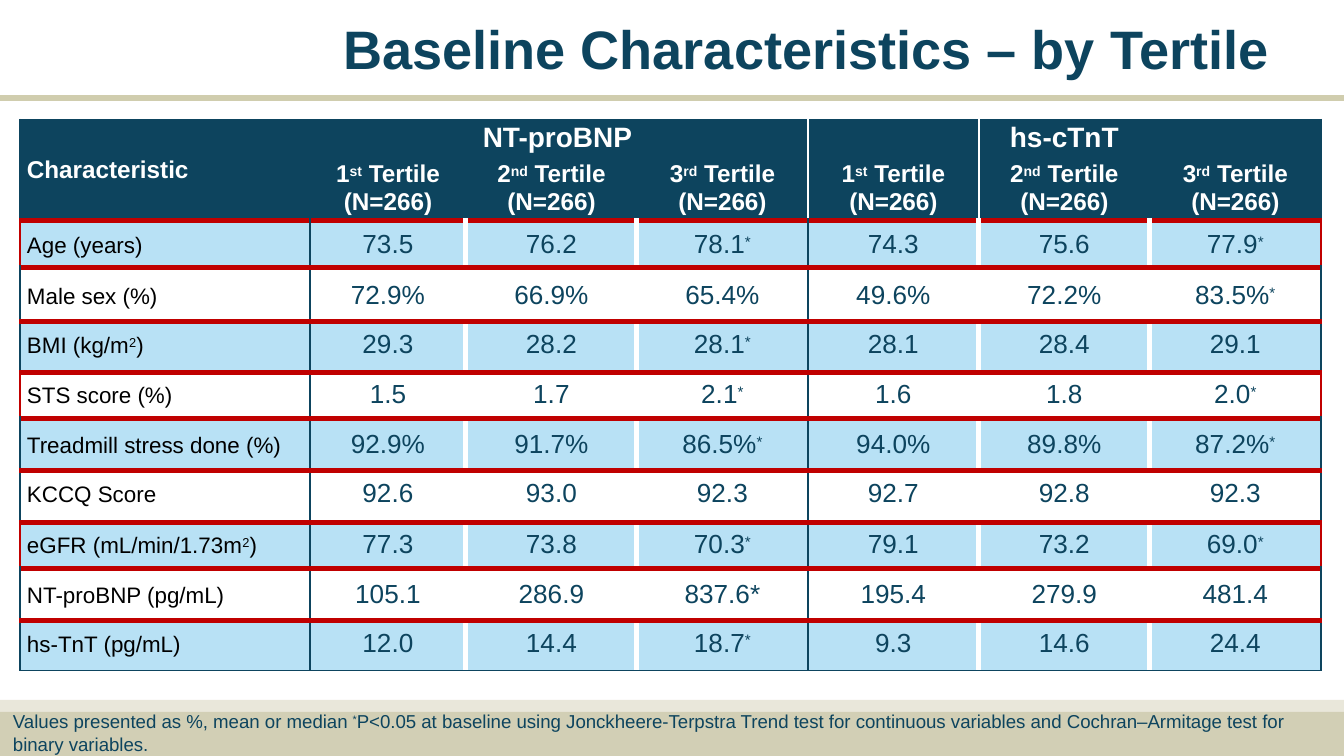
"""Builds the slide of baseline characteristics by tertile."""
from typing import NamedTuple, Optional

from lxml.etree import SubElement
from pptx import Presentation
from pptx.dml.color import RGBColor
from pptx.enum.shapes import MSO_CONNECTOR, MSO_SHAPE
from pptx.enum.text import MSO_ANCHOR, MSO_AUTO_SIZE, PP_ALIGN
from pptx.oxml.ns import qn
from pptx.util import Emu, Pt

NAVY = RGBColor(0x0D, 0x44, 0x5E)
RED = RGBColor(0xC0, 0x00, 0x00)
SKY = RGBColor(0xB8, 0xE1, 0xF5)
SAND = RGBColor(0xD2, 0xCF, 0xB5)
CREAM = RGBColor(0xE9, 0xE7, 0xDA)
RULE = RGBColor(0xD0, 0xCD, 0xAE)
WHITE = RGBColor(0xFF, 0xFF, 0xFF)
BLACK = RGBColor(0x00, 0x00, 0x00)
SCALE = 914400 / 134.4


class Style(NamedTuple):
    size: float
    color: RGBColor
    bold: bool = False
    align: PP_ALIGN = PP_ALIGN.LEFT


class Line(NamedTuple):
    color: RGBColor
    width: int


class Row(NamedTuple):
    high: int
    pad: int
    label: str
    values: str


class Band(NamedTuple):
    top: int
    high: int
    color: RGBColor


TITLE = Style(29, NAVY, True)
GROUP = Style(15, WHITE, True, PP_ALIGN.CENTER)
STUB = Style(13, WHITE, True)
HEAD = Style(13, WHITE, True, PP_ALIGN.CENTER)
LABEL = Style(12, BLACK)
VALUE = Style(14, NAVY, False, PP_ALIGN.CENTER)
NOTE = Style(10, NAVY)

THIN, THICK = Line(NAVY, 1), Line(RED, 3)
GAP, HAIR, EDGE = Line(WHITE, 3), Line(WHITE, 1), Line(RED, 1)

COLS = [290, 156] + [171] * 5
GROUPS = {2: "NT-proBNP", 5: "hs-cTnT"}
TERTILES = [f"{mark} Tertile\n(N=266)" for mark in ("1^st^", "2^nd^", "3^rd^")]
ROWS = [
    Row(47, 9, "Age (years)", "73.5 76.2 78.1^* 74.3 75.6 77.9^*"),
    Row(54, 13, "Male sex (%)", "72.9% 66.9% 65.4% 49.6% 72.2% 83.5%^*"),
    Row(51, 8, "BMI (kg/m^2^)", "29.3 28.2 28.1^* 28.1 28.4 29.1"),
    Row(46, 7, "STS score (%)", "1.5 1.7 2.1^* 1.6 1.8 2.0^*"),
    Row(52, 11, "Treadmill stress done (%)",
        "92.9% 91.7% 86.5%^* 94.0% 89.8% 87.2%^*"),
    Row(52, 8, "KCCQ Score", "92.6 93.0 92.3 92.7 92.8 92.3"),
    Row(46, 7, "eGFR (mL/min/1.73m^2^)", "77.3 73.8 70.3^* 79.1 73.2 69.0^*"),
    Row(52, 11, "NT-proBNP (pg/mL)", "105.1 286.9 837.6* 195.4 279.9 481.4"),
    Row(50, 8, "hs-TnT (pg/mL)", "12.0 14.4 18.7^* 9.3 14.6 24.4"),
]
HIGHS = [38, 64] + [row.high for row in ROWS]
BANDS = [Band(700, 12, CREAM), Band(712, 44, SAND)]
FOOT = ("Values presented as %, mean or median ^*^P<0.05 at baseline using "
        "Jonckheere-Terpstra Trend test for continuous variables and "
        "Cochran–Armitage test for\nbinary variables.")


def px(count: int) -> Emu:
    """Turn pixels into EMU."""
    return Emu(round(count * SCALE))


def write(frame, text: str, style: Style) -> None:
    """Fill a text frame, raising what stands between carets."""
    for at, line in enumerate(text.split("\n")):
        par = frame.add_paragraph() if at else frame.paragraphs[0]
        par.alignment = style.align
        par.space_before = Pt(0)
        font = par.font
        font.name, font.size, font.bold = "Arial", Pt(style.size), style.bold
        font.color.rgb = style.color
        for turn, part in enumerate(line.split("^")):
            if part:
                run = par.add_run()
                run.text = part
                if turn % 2:
                    run._r.get_or_add_rPr().set("baseline", "25000")


def inset(box, left: int, top: int) -> None:
    """Set the inner margins of a cell or text frame."""
    box.margin_left, box.margin_top = px(left), px(top)
    box.margin_right = box.margin_bottom = 0
    box.vertical_anchor = MSO_ANCHOR.TOP


def upright(row: int, edge: int) -> Optional[Line]:
    """Give the vertical line at a column edge."""
    if row < 2:
        return {0: THIN, 4: HAIR, 5: HAIR, 7: THIN}.get(edge)
    if edge in (0, 7):
        return EDGE if (row - 2) % 3 == 0 and row < 9 else THIN
    return THIN if edge in (1, 4) else GAP


def level(edge: int) -> Optional[Line]:
    """Give the horizontal line at a row edge."""
    if edge < 2:
        return None
    return THIN if edge == len(HIGHS) else THICK


def border(cell, row: int, col: int) -> None:
    """Draw the four sides of a cell."""
    sides = {"L": upright(row, col), "R": upright(row, col + 1),
             "T": level(row), "B": level(row + 1)}
    props = cell._tc.get_or_add_tcPr()
    for side, line in sides.items():
        node = SubElement(props, qn(f"a:ln{side}"))
        if line is None:
            SubElement(node, qn("a:noFill"))
            continue
        node.set("w", str(Pt(line.width)))
        fill = SubElement(node, qn("a:solidFill"))
        SubElement(fill, qn("a:srgbClr")).set("val", str(line.color))


def fill_cell(cell, row: int, col: int, text: str, style: Style,
              left: int, top: int) -> None:
    """Write, border and paint one cell."""
    inset(cell, left, top)
    write(cell.text_frame, text, style)
    border(cell, row, col)
    if row < 2 or row % 2 == 0:
        cell.fill.solid()
        cell.fill.fore_color.rgb = NAVY if row < 2 else SKY
    else:
        cell.fill.background()


def add_grid(slide) -> None:
    """Add the table of characteristics."""
    grid = slide.shapes.add_table(len(HIGHS), len(COLS), px(20), px(119),
                                  px(sum(COLS)), px(sum(HIGHS))).table
    grid.first_row = grid.horz_banding = False
    for col, wide in zip(grid.columns, COLS):
        col.width = px(wide)
    for row, high in zip(grid.rows, HIGHS):
        row.height = px(high)
    for col in range(len(COLS)):
        fill_cell(grid.cell(0, col), 0, col, GROUPS.get(col, ""), GROUP,
                  12 if col == 2 else 0, 3)
    fill_cell(grid.cell(1, 0), 1, 0, "Characteristic", STUB, 7, 0)
    for col, text in enumerate(TERTILES * 2, 1):
        fill_cell(grid.cell(1, col), 1, col, text, HEAD, 0, 4)
    for at, row in enumerate(ROWS, 2):
        fill_cell(grid.cell(at, 0), at, 0, row.label, LABEL, 7, row.pad + 3)
        for col, text in enumerate(row.values.split(), 1):
            fill_cell(grid.cell(at, col), at, col, text, VALUE, 0, row.pad)


def add_band(slide, band: Band) -> None:
    """Add a full-width strip."""
    strip = slide.shapes.add_shape(MSO_SHAPE.RECTANGLE, 0, px(band.top),
                                   px(1344), px(band.high))
    strip.shadow.inherit = False
    strip.fill.solid()
    strip.fill.fore_color.rgb = band.color
    strip.line.fill.background()


def add_rule(slide) -> None:
    """Add the line under the title."""
    rule = slide.shapes.add_connector(MSO_CONNECTOR.STRAIGHT, 0, px(98),
                                      px(1344), px(98))
    rule.line.color.rgb = RULE
    rule.line.width = Pt(3)
    SubElement(rule._element.spPr, qn("a:effectLst"))


def set_text(shape, text: str, style: Style, left: int, top: int) -> None:
    """Write a wrapped text shape."""
    frame = shape.text_frame
    frame.word_wrap = True
    frame.auto_size = MSO_AUTO_SIZE.NONE
    inset(frame, left, top)
    write(frame, text, style)


def main() -> None:
    """Build and save the slide."""
    deck = Presentation()
    deck.slide_width, deck.slide_height = px(1344), px(756)
    slide = deck.slides.add_slide(deck.slide_layouts[5])
    for band in BANDS:
        add_band(slide, band)
    add_rule(slide)
    add_grid(slide)
    note = slide.shapes.add_textbox(px(8), px(707), px(1289), px(48))
    set_text(note, FOOT, NOTE, 5, 3)
    title = slide.shapes.title
    title.left, title.top = px(331), px(12)
    title.width, title.height = px(984), px(72)
    set_text(title, "Baseline Characteristics – by Tertile", TITLE, 12, 3)
    deck.save("out.pptx")


if __name__ == "__main__":
    main()
